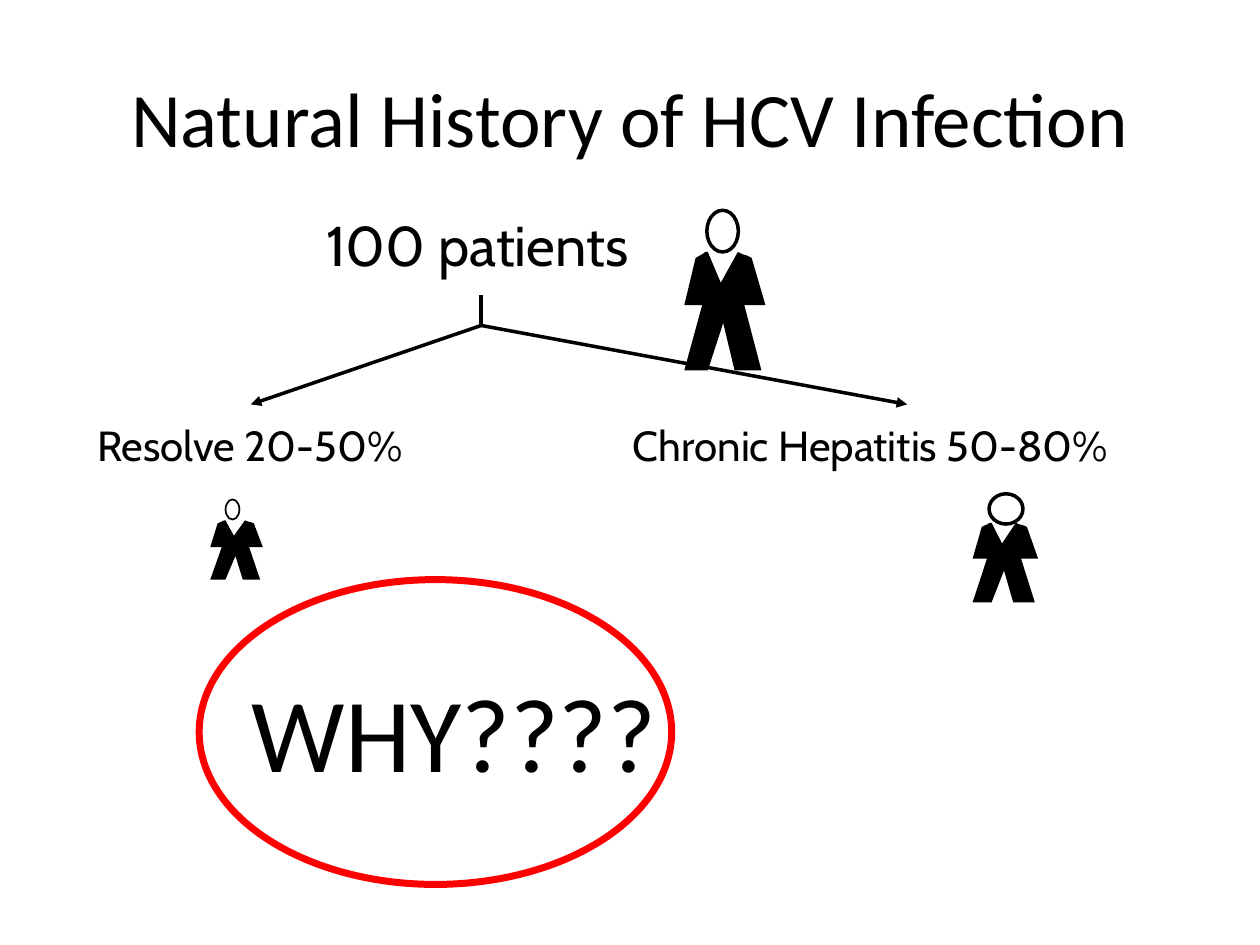
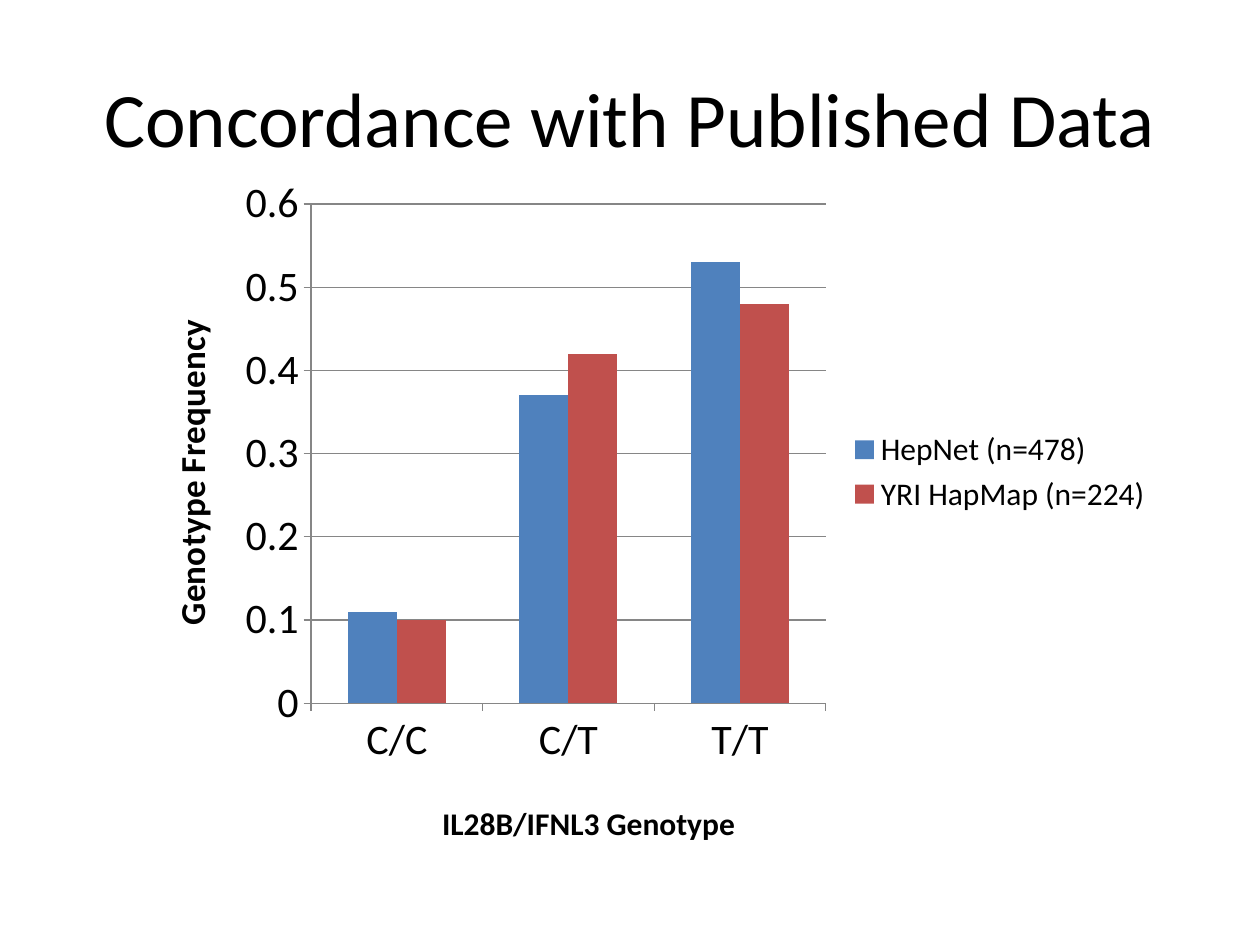
from lxml import etree
from pptx import Presentation
from pptx.chart.data import CategoryChartData
from pptx.dml.color import RGBColor
from pptx.enum.chart import XL_CHART_TYPE as ChartType, XL_LEGEND_POSITION as LegendPlace
from pptx.enum.chart import XL_TICK_MARK as TickMark
from pptx.enum.shapes import MSO_CONNECTOR as Connector, MSO_SHAPE as Shape
from pptx.enum.text import MSO_ANCHOR as Anchor, PP_ALIGN as Align
from pptx.oxml import parse_xml
from pptx.oxml.ns import nsdecls, qn
from pptx.util import Pt

COLORS = {name: RGBColor.from_string(value) for name, value in {
    "black": "000000", "red": "FF0000", "grid": "868686",
    "hepnet": "4F81BD", "hapmap": "C0504D"}.items()}
BODY, LABEL = "Calibri", "Cabin"

deck = Presentation()
deck.slide_width, deck.slide_height = Pt(720), Pt(540)


def add_span(para, text, size, font=BODY, bold=False):
    span = para.add_run()
    span.text = text
    span.font.size, span.font.name, span.font.bold = Pt(size), font, bold
    span.font.color.rgb = COLORS["black"]


def add_oval(page, left, top, width, height, color, weight):
    oval = page.shapes.add_shape(Shape.OVAL, Pt(left), Pt(top), Pt(width), Pt(height))
    oval.shadow.inherit = False
    oval.fill.background()
    oval.line.color.rgb, oval.line.width = COLORS[color], Pt(weight)


# Both pages share the title style
pages = []
for heading in ("Natural History of HCV Infection", "Concordance with Published Data"):
    page = deck.slides.add_slide(deck.slide_layouts[5])
    title = page.shapes.title
    title.left, title.top, title.width, title.height = Pt(36), Pt(21.6), Pt(648), Pt(90)
    title.text_frame.vertical_anchor = Anchor.MIDDLE
    para = title.text_frame.paragraphs[0]
    para.alignment = Align.CENTER
    add_span(para, heading, 44)
    pages.append(page)
history, concordance = pages

# Patient groups
for text, left, top, width, height, size in (
        ("100 patients", 177.8, 116.6, 190, 46, 32),
        ("Resolve 20-50%", 46.8, 236.2, 192.2, 36, 24),
        ("Chronic Hepatitis 50-80%", 352.8, 236.2, 289.4, 36, 24)):
    box = history.shapes.add_textbox(Pt(left), Pt(top), Pt(width), Pt(height))
    box.text_frame.word_wrap = False
    para = box.text_frame.paragraphs[0]
    para.alignment = Align.CENTER
    add_span(para, text, size, LABEL)

# Stem and two branches leaving one fork
fork = (275, 186)
for end, has_arrow in (((275, 168.5), False), ((143.3, 231.1), True), ((518.4, 231.1), True)):
    branch = history.shapes.add_connector(Connector.STRAIGHT, *map(Pt, fork + end))
    branch.line.color.rgb, branch.line.width = COLORS["black"], Pt(2)
    if has_arrow:
        etree.SubElement(branch.line._get_or_add_ln(), qn("a:tailEnd"), type="triangle")
    etree.SubElement(branch._element.spPr, qn("a:effectLst"))

# People: one body outline in percent of its frame, plus a head
OUTLINE = ((83, 5), (77, 3), (72, 2), (66, 0), (45, 26), (29, 0), (26, 0), (22, 2), (14, 5),
           (0, 45), (22, 45), (0, 100), (29, 100), (48, 60), (62, 100), (95, 100),
           (74, 45), (100, 45))
for body, head, head_weight in (
        ((391, 144, 46.4, 67.7), (403.9, 120.2, 18, 23.8), 2),
        ((555.8, 298.8, 37.4, 45.4), (565.2, 282.2, 19.4, 17.3), 2),
        ((120.2, 297.4, 30, 33.8), (128.9, 285.4, 7.9, 11.5), 1)):
    left, top, width, height = body
    points = [(Pt(left + width * x / 100), Pt(top + height * y / 100)) for x, y in OUTLINE]
    builder = history.shapes.build_freeform(*points[0])
    builder.add_line_segments(points[1:], close=True)
    person = builder.convert_to_shape()
    person.shadow.inherit = False
    person.fill.solid()
    person.fill.fore_color.rgb = COLORS["black"]
    person.line.fill.background()
    add_oval(history, *head, "black", head_weight)

# The circled question
box = history.shapes.add_textbox(Pt(95.8), Pt(378), Pt(401.8), Pt(80))
box.text_frame.word_wrap = True
box.text_frame.margin_left = Pt(48)
add_span(box.text_frame.paragraphs[0], "WHY????", 60)
add_oval(history, 113.8, 331.2, 270, 174.2, "red", 4)

# Genotype chart
data = CategoryChartData()
data.categories = ("C/C", "C/T", "T/T")
data.add_series("HepNet (n=478)", (0.11, 0.37, 0.53))
data.add_series("YRI HapMap (n=224)", (0.1, 0.42, 0.48))
chart = concordance.shapes.add_chart(ChartType.COLUMN_CLUSTERED, Pt(77.8), Pt(95.8),
                                     Pt(588.2), Pt(347.8), data).chart
chart.has_title = False
chart.font.name, chart.font.size = BODY, Pt(10)
chart.font.color.rgb = COLORS["black"]
plot = chart.plots[0]
plot.gap_width, plot.overlap, plot.vary_by_categories = 150, 0, False
for series, color in zip(plot.series, ("hepnet", "hapmap")):
    series.format.fill.solid()
    series.format.fill.fore_color.rgb = COLORS[color]

# Axes, grid and legend
value_axis = chart.value_axis
value_axis.minimum_scale, value_axis.maximum_scale, value_axis.major_unit = 0, 0.6, 0.1
value_axis.tick_labels.number_format = "General"
value_axis.tick_labels.number_format_is_linked = False
value_axis.has_major_gridlines = True
add_span(value_axis.axis_title.text_frame.paragraphs[0], "Genotype Frequency", 20, bold=True)
for axis in (chart.category_axis, value_axis):
    axis.tick_labels.font.size = Pt(24)
    axis.major_tick_mark = TickMark.OUTSIDE
    axis.format.line.color.rgb = COLORS["grid"]
value_axis.major_gridlines.format.line.color.rgb = COLORS["grid"]
chart.has_legend = True
chart.legend.position = LegendPlace.RIGHT
chart.legend.include_in_layout = False
chart.legend.font.size = Pt(18)

# Fixed plot area, in fractions of the chart
layout = parse_xml(f'<c:layout {nsdecls("c")}><c:manualLayout><c:layoutTarget val="inner"/>'
                   '<c:xMode val="edge"/><c:yMode val="edge"/><c:x val="0.17"/><c:y val="0.06"/>'
                   '<c:w val="0.5"/><c:h val="0.82"/></c:manualLayout></c:layout>')
plot_area = chart._chartSpace.chart.plotArea
for old_layout in plot_area.findall(qn("c:layout")):
    plot_area.remove(old_layout)
plot_area.insert(0, layout)

# Category caption
box = concordance.shapes.add_textbox(Pt(245.5), Pt(455.8), Pt(183.6), Pt(28.8))
box.text_frame.word_wrap = False
add_span(box.text_frame.paragraphs[0], "IL28B/IFNL3 Genotype", 18, bold=True)

deck.save("out.pptx")
